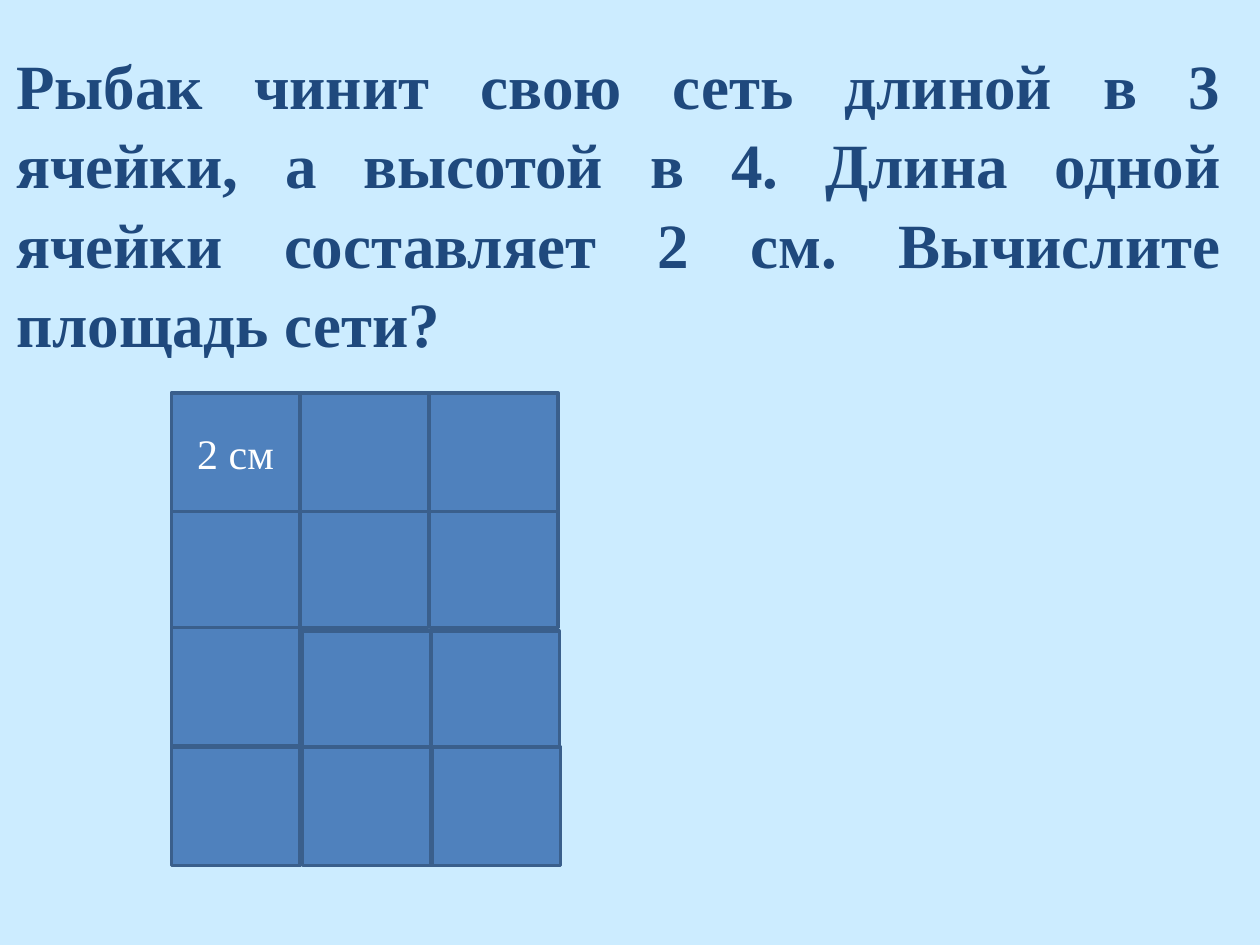
from dataclasses import dataclass

import pptx
import pptx.dml.color
import pptx.enum.shapes
import pptx.enum.text
import pptx.util

Inches = pptx.util.Inches
Pt = pptx.util.Pt
Align = pptx.enum.text.PP_ALIGN


@dataclass(frozen=True)
class Theme:
    font: str = "Times New Roman"
    background: str = "CCECFF"
    task: str = "1F497D"
    cell: str = "4F81BD"
    border: str = "3A5F8C"
    label: str = "FFFFFF"
    task_size: int = 36
    label_size: int = 24
    border_width: int = 2


THEME = Theme()
TASK = ("Рыбак чинит свою сеть длиной в 3 ячейки, а высотой в 4. "
        "Длина одной ячейки составляет 2 см. Вычислите площадь сети?")
CELL_WIDTH = 1.02
CELL_HEIGHT = 0.94
# Each row: left edges, then (top, height) of the first cell and of the others
NET_ROWS = [
    ((1.36, 2.38, 3.41), (3.12, CELL_HEIGHT), (3.12, CELL_HEIGHT)),
    ((1.36, 2.38, 3.41), (4.06, CELL_HEIGHT), (4.06, 0.92)),
    ((1.36, 2.40, 3.42), (4.98, CELL_HEIGHT), (5.01, 0.92)),
    ((1.36, 2.40, 3.43), (5.93, CELL_HEIGHT), (5.93, CELL_HEIGHT)),
]


def color(value):
    return pptx.dml.color.RGBColor.from_string(value)


def write(para, text, size, text_color, align, bold=False):
    para.alignment = align
    span = para.add_run()
    span.text = text
    span.font.name = THEME.font
    span.font.size = Pt(size)
    span.font.bold = bold
    span.font.color.rgb = color(text_color)


def add_task(page):
    box = page.shapes.add_textbox(Inches(0.03), Inches(0.29), Inches(9.76), Inches(2.52))
    frame = box.text_frame
    frame.word_wrap = True
    frame.auto_size = pptx.enum.text.MSO_AUTO_SIZE.SHAPE_TO_FIT_TEXT
    para = frame.paragraphs[0]
    para.line_spacing = 1.05
    write(para, TASK, THEME.task_size, THEME.task, Align.JUSTIFY, bold=True)


def add_cell(page, left, top, height):
    cell = page.shapes.add_shape(
        pptx.enum.shapes.MSO_SHAPE.RECTANGLE,
        Inches(left), Inches(top), Inches(CELL_WIDTH), Inches(height))
    cell.shadow.inherit = False
    cell.fill.solid()
    cell.fill.fore_color.rgb = color(THEME.cell)
    cell.line.color.rgb = color(THEME.border)
    cell.line.width = Pt(THEME.border_width)
    return cell


def add_net(page):
    """Draw the net column by column and return its cells by (row, column)."""
    cells = {}
    for column in range(3):
        for row, (lefts, first, others) in enumerate(NET_ROWS):
            top, height = others if column else first
            cells[row, column] = add_cell(page, lefts[column], top, height)
    return cells


def label_cell(cell, text):
    frame = cell.text_frame
    frame.vertical_anchor = pptx.enum.text.MSO_ANCHOR.MIDDLE
    write(frame.paragraphs[0], text, THEME.label_size, THEME.label, Align.CENTER)


def main():
    deck = pptx.Presentation()
    deck.slide_width = Inches(10)
    deck.slide_height = Inches(7.5)
    page = deck.slides.add_slide(deck.slide_layouts[6])
    page.background.fill.solid()
    page.background.fill.fore_color.rgb = color(THEME.background)
    add_task(page)
    net = add_net(page)
    label_cell(net[0, 0], "2 см")
    deck.save("out.pptx")


if __name__ == "__main__":
    main()
